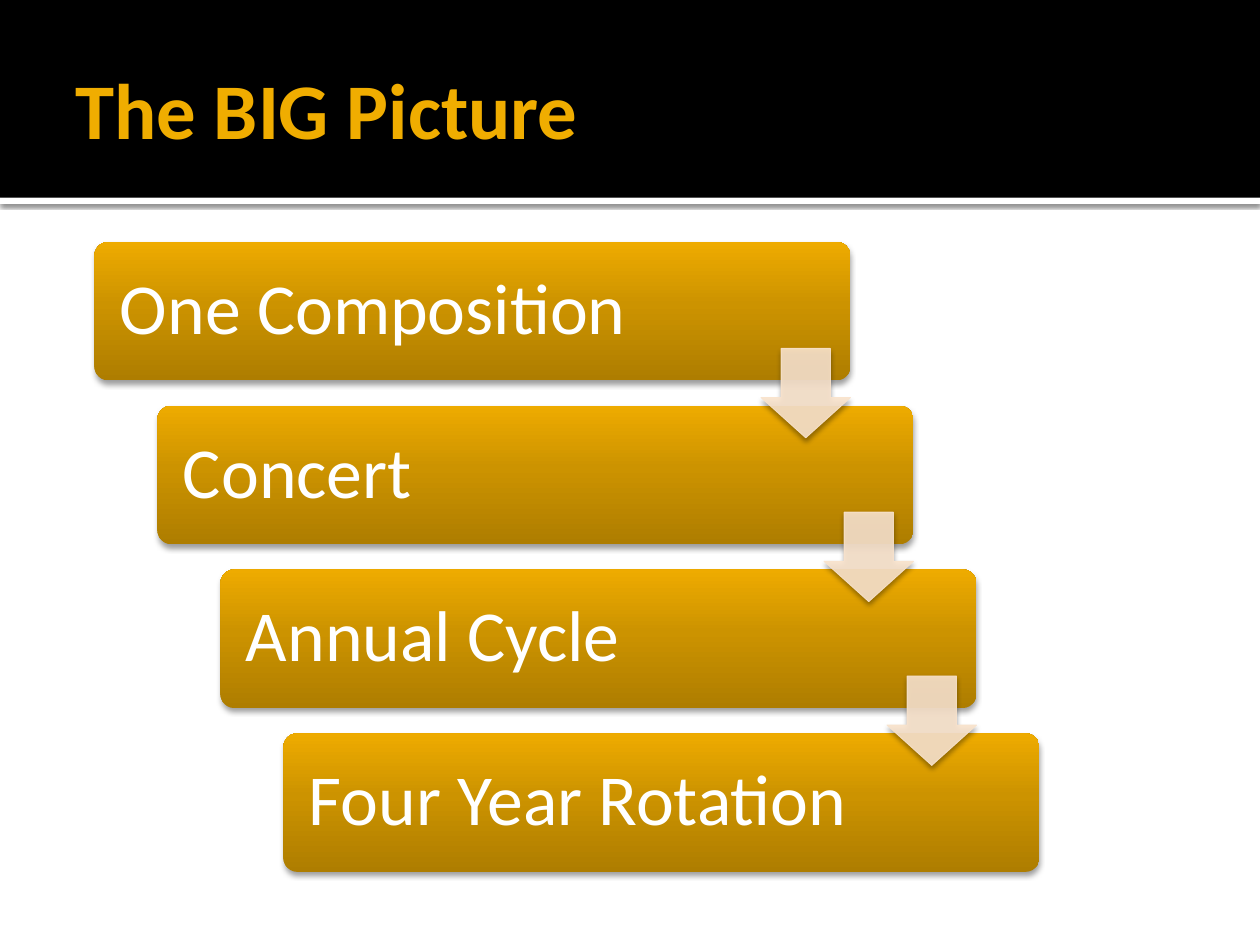
from lxml import etree
from pptx import Presentation
from pptx.dml.color import RGBColor
from pptx.enum.shapes import MSO_SHAPE
from pptx.enum.text import MSO_ANCHOR, PP_ALIGN
from pptx.oxml import parse_xml
from pptx.oxml.ns import nsdecls, qn
from pptx.util import Pt

RECT, ROUNDED = MSO_SHAPE.RECTANGLE, MSO_SHAPE.ROUNDED_RECTANGLE
DOWN_ARROW = MSO_SHAPE.DOWN_ARROW
MIDDLE, LEFT = MSO_ANCHOR.MIDDLE, PP_ALIGN.LEFT

BLACK = RGBColor(0x00, 0x00, 0x00)
WHITE = RGBColor(0xFF, 0xFF, 0xFF)
GOLD = RGBColor(0xF0, 0xAD, 0x00)
CREAM = RGBColor(0xF9, 0xE3, 0xCC)
GOLD_STOPS = [
    (0, RGBColor(0xAE, 0x7D, 0x00)),
    (55, RGBColor(0xCC, 0x93, 0x00)),
    (100, RGBColor(0xEE, 0xAB, 0x00)),
]

SLIDE_W, SLIDE_H = 720, 540
BAND_H, RULE_H = 113, 3.6
STEPS = ["One Composition", "Concert", "Annual Cycle", "Four Year Rotation"]
STEP_X, STEP_Y = 54, 138.24
STEP_W, STEP_H = 432, 79.2
SHIFT_X, SHIFT_Y = 36, 93.6
LABEL_W, LABEL_PAD = 340, 2.3
ARROW = 51.1

SOFT_SHADOW = {"opacity": 38, "blur": 3.1, "dist": 2}
RULE_SHADOW = {"opacity": 60, "blur": 2.5, "dist": 0.8}


class Deck:
    font = "Calibri"

    def __init__(self, slide):
        self.s = slide

    def shape(self, kind, x, y, w, h, adjustments=(), shadow=None):
        """Add an unlined preset shape, with a downward shadow if given."""
        sp = self.s.shapes.add_shape(kind, Pt(x), Pt(y), Pt(w), Pt(h))
        for i, value in enumerate(adjustments):
            sp.adjustments[i] = value
        sp.line.fill.background()
        sp.shadow.inherit = False
        if shadow:
            effects = sp._element.spPr.find(qn("a:effectLst"))
            effects.append(parse_xml(
                f'<a:outerShdw {nsdecls("a")} blurRad="{Pt(shadow["blur"])}"'
                f' dist="{Pt(shadow["dist"])}" dir="5400000" rotWithShape="0">'
                f'<a:srgbClr val="{BLACK}"><a:alpha val="{shadow["opacity"] * 1000}"/>'
                '</a:srgbClr></a:outerShdw>'))
        return sp

    def bar(self, y, h, color, shadow=None):
        sp = self.shape(RECT, 0, y, SLIDE_W, h, shadow=shadow)
        sp.fill.solid()
        sp.fill.fore_color.rgb = color

    def card(self, x, y):
        sp = self.shape(ROUNDED, x, y, STEP_W, STEP_H, [0.1], SOFT_SHADOW)
        stops = "".join(
            f'<a:gs pos="{pos * 1000}"><a:srgbClr val="{color}"/></a:gs>'
            for pos, color in GOLD_STOPS)
        sp._element.spPr.find(qn("a:prstGeom")).addnext(parse_xml(
            f'<a:gradFill {nsdecls("a")} rotWithShape="1"><a:gsLst>{stops}</a:gsLst>'
            '<a:lin ang="16200000" scaled="0"/></a:gradFill>'))

    def arrow(self, x, y):
        sp = self.shape(DOWN_ARROW, x, y, ARROW, ARROW, [0.55, 0.45], SOFT_SHADOW)
        sp.line.width = Pt(0.5)
        for fill in (sp.fill, sp.line.fill):
            fill.solid()
            fill.fore_color.rgb = CREAM
        for color in sp._element.spPr.iter(qn("a:srgbClr")):
            if color.get("val") == str(CREAM):
                etree.SubElement(color, qn("a:alpha")).set("val", "90000")

    def text(self, text, x, y, w, h, margins, size, color, bold=False, spacing=1.0):
        """Add a middle-anchored line; margins run left, top, right, bottom."""
        tf = self.s.shapes.add_textbox(Pt(x), Pt(y), Pt(w), Pt(h)).text_frame
        frame = {"word_wrap": True, "vertical_anchor": MIDDLE}
        for side, margin in zip(("left", "top", "right", "bottom"), margins):
            frame[f"margin_{side}"] = Pt(margin)
        for name, value in frame.items():
            setattr(tf, name, value)
        p = tf.paragraphs[0]
        p.alignment = LEFT
        p.line_spacing = spacing
        r = p.add_run()
        r.text = text
        for name, value in {"name": self.font, "size": Pt(size), "bold": bold}.items():
            setattr(r.font, name, value)
        r.font.color.rgb = color


def main():
    prs = Presentation()
    prs.slide_width, prs.slide_height = Pt(SLIDE_W), Pt(SLIDE_H)
    deck = Deck(prs.slides.add_slide(prs.slide_layouts[6]))

    deck.bar(BAND_H, RULE_H, WHITE, RULE_SHADOW)
    deck.bar(0, BAND_H, BLACK)
    deck.text("The BIG Picture", 36, 12.2, 648, 98.6, (7.2, 3.6, 3.6, 3.6),
              45, GOLD, bold=True)

    corners = [(STEP_X + i * SHIFT_X, STEP_Y + i * SHIFT_Y) for i in range(len(STEPS))]
    for label, (x, y) in zip(STEPS, corners):
        deck.card(x, y)
        deck.text(label, x + LABEL_PAD, y + LABEL_PAD, LABEL_W, STEP_H - 2 * LABEL_PAD,
                  (12.3,) * 4, 41, WHITE, spacing=0.9)

    # Each arrow is flush with its card's right edge and centred on the gap below.
    for x, y in corners[:-1]:
        deck.arrow(x + STEP_W - ARROW, y + (STEP_H + SHIFT_Y - ARROW) / 2)

    prs.save("out.pptx")


if __name__ == "__main__":
    main()
